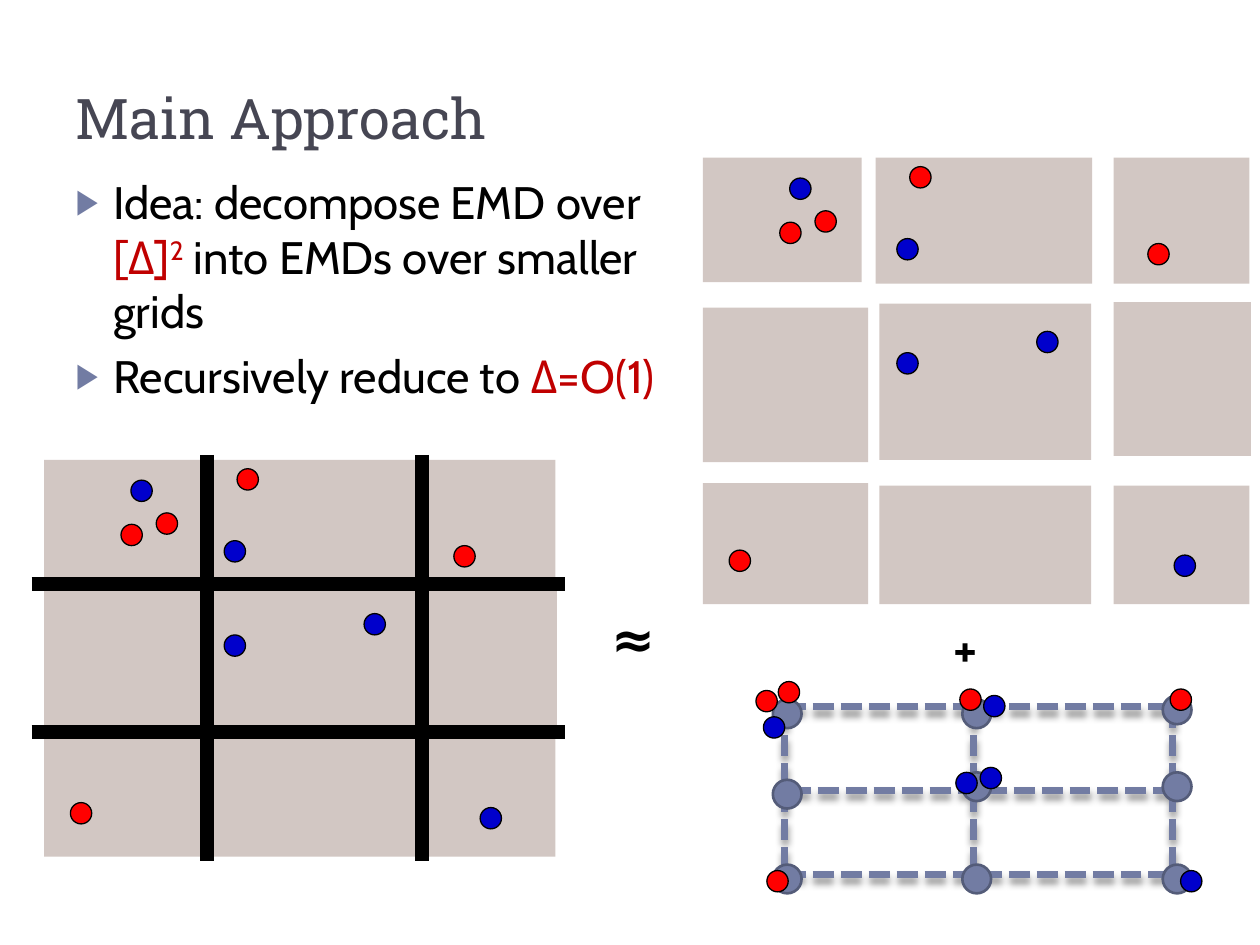
from lxml import etree
from pptx import Presentation
from pptx.dml.color import RGBColor
from pptx.enum import dml, shapes, text
from pptx.oxml import ns, parse_xml
from pptx.util import Cm, Pt

RED, BLUE, BLACK = "FF0000", "0000CC", "000000"
TAN, SLATE, SLATE_DARK = "D2C7C3", "727CA3", "545C79"
TITLE_COLOR, ACCENT = "464653", "C00000"
DOT, NODE = 0.43, 0.58

# Cells by row: left, top, width, height, and dots as (colour, x, y) within the cell
CELLS = [
    [(0, 0, 3.2, 2.51, [(RED, 1.55, 1.3), (RED, 2.26, 1.07), (BLUE, 1.75, 0.41)]),
     (3.2, 0, 4.37, 2.54, [(RED, 0.69, 0.18), (BLUE, 0.43, 1.63)]),
     (7.57, 0, 2.74, 2.54, [(RED, 0.69, 1.73)])],
    [(0, 2.44, 3.33, 3.12, []),
     (3.28, 2.54, 4.27, 3.15, [(BLUE, 3.17, 0.56), (BLUE, 0.35, 0.99)]),
     (7.57, 2.51, 2.77, 3.1, [])],
    [(0, 5.56, 3.33, 2.44, [(RED, 0.53, 1.35)]),
     (3.28, 5.61, 4.27, 2.39, []),
     (7.57, 5.61, 2.74, 2.39, [(BLUE, 1.22, 1.4)])],
]
# How far the cells move when the grid is pulled apart
COLUMN_SHIFTS = [0, 0.28, 0.71]
ROW_SHIFTS = [(0, 0, 0), (0.58, 0.4, 0.4), (1, 1, 1)]

# Coarse grid, relative to its top left corner
COARSE_XS, COARSE_YS = [0, 3.81, 7.82], [0, 1.68, 3.38]
NODE_XS = [-0.24, 3.58, 7.62]
NODE_YS = [(-0.15, -0.15, -0.23), (1.47, 1.32, 1.32), (3.18, 3.18, 3.18)]
COARSE_DOTS = [
    (RED, -0.13, -0.51), (RED, -0.58, -0.33), (BLUE, -0.43, 0.2),
    (RED, 3.53, -0.36), (RED, 7.77, -0.36), (RED, -0.36, 3.3),
    (BLUE, 4.01, -0.23), (BLUE, 3.45, 1.32), (BLUE, 3.94, 1.22), (BLUE, 7.98, 3.3),
]


def rgb(value):
    return RGBColor.from_string(value)


def add_filled(parent, kind, box, fill, line=None, line_width=0.75):
    shape = parent.shapes.add_shape(kind, *map(Cm, box))
    shape.shadow.inherit = False
    shape.fill.solid()
    shape.fill.fore_color.rgb = rgb(fill)
    if line:
        shape.line.color.rgb = rgb(line)
        shape.line.width = Pt(line_width)
    else:
        shape.line.fill.background()


def add_dot(parent, color, x, y):
    add_filled(parent, shapes.MSO_SHAPE.OVAL, (x, y, DOT, DOT), color, BLACK)


def add_line(parent, start, end, color, width, dashed=False):
    line = parent.shapes.add_connector(
        shapes.MSO_CONNECTOR.STRAIGHT, *map(Cm, start + end))
    line.line.color.rgb = rgb(color)
    line.line.width = Pt(width)
    if dashed:
        line.line.dash_style = dml.MSO_LINE.SQUARE_DOT
        line.line._get_or_add_ln().find(ns.qn("a:prstDash")).set("val", "sysDash")
    shadow = ('<a:outerShdw blurRad="50800" dist="43180" dir="5400000" rotWithShape="0">'
              '<a:srgbClr val="000000"><a:alpha val="40000"/></a:srgbClr></a:outerShdw>')
    line._element.spPr.append(parse_xml(
        f'<a:effectLst {ns.nsdecls("a")}>{shadow if dashed else ""}</a:effectLst>'))


def format_run(run, size, font, color, bold=False):
    run.font.size = Pt(size)
    run.font.name = font
    run.font.color.rgb = rgb(color)
    run.font.bold = bold


def place_text(shape, box):
    shape.left, shape.top, shape.width, shape.height = map(Cm, box)
    shape.text_frame.auto_size = text.MSO_AUTO_SIZE.NONE
    return shape.text_frame


def add_title(slide, box):
    frame = place_text(slide.shapes.title, box)
    frame.text = "Main Approach"
    frame.vertical_anchor = text.MSO_ANCHOR.BOTTOM
    frame.paragraphs[0].alignment = text.PP_ALIGN.LEFT
    format_run(frame.paragraphs[0].runs[0], 32, "Roboto Slab", TITLE_COLOR)


def set_bullet(paragraph):
    paragraph.space_before = Pt(6)
    properties = paragraph._p.get_or_add_pPr()
    properties.set("marL", str(Cm(0.76)))
    properties.set("indent", str(-Cm(0.76)))
    color = etree.SubElement(properties, ns.qn("a:buClr"))
    etree.SubElement(color, ns.qn("a:srgbClr"), val=SLATE)
    etree.SubElement(properties, ns.qn("a:buSzPct"), val="76000")
    etree.SubElement(properties, ns.qn("a:buChar"), char="▶")


def add_ideas(slide, box):
    frame = place_text(slide.placeholders[1], box)
    ideas = [
        [("Idea: decompose EMD over ", BLACK), ("[Δ]", ACCENT), ("2", ACCENT),
         (" into EMDs over smaller grids", BLACK)],
        [("Recursively reduce to ", BLACK), ("Δ=O(1)", ACCENT)],
    ]
    for index, parts in enumerate(ideas):
        paragraph = frame.paragraphs[0] if index == 0 else frame.add_paragraph()
        set_bullet(paragraph)
        for words, color in parts:
            run = paragraph.add_run()
            run.text = words
            format_run(run, 26, "Cabin", color)
            if words == "2":
                run.font._element.set("baseline", "30000")


def add_cells(slide, left, top, apart=False):
    dots = []
    for row, cells in enumerate(CELLS):
        for column, (x, y, width, height, cell_dots) in enumerate(cells):
            x += left + (COLUMN_SHIFTS[column] if apart else 0)
            y += top + (ROW_SHIFTS[row][column] if apart else 0)
            add_filled(slide, shapes.MSO_SHAPE.RECTANGLE, (x, y, width, height), TAN)
            dots += [(color, x + dx, y + dy) for color, dx, dy in cell_dots]
    for dot in dots:
        add_dot(slide, *dot)


def add_cuts(slide, left, top):
    group = slide.shapes.add_group_shape()
    for x in (3.28, 7.62):
        add_line(group, (left + x, top - 0.1), (left + x, top + 8.08), BLACK, 8)
    for y in (2.51, 5.49):
        add_line(group, (left - 0.25, top + y), (left + 10.49, top + y), BLACK, 8)


def add_coarse_grid(slide, left, top):
    group = slide.shapes.add_group_shape()
    # Dashed grid lines
    for y, shift in zip(COARSE_YS, (0, 0.1, 0)):
        start = left + shift
        add_line(group, (start, top + y), (start + 7.72, top + y), SLATE, 4, True)
    for x in COARSE_XS:
        add_line(group, (left + x, top), (left + x, top + COARSE_YS[-1]), SLATE, 4, True)
    # Nodes and the points moved onto them
    for row in NODE_YS:
        for x, y in zip(NODE_XS, row):
            add_filled(group, shapes.MSO_SHAPE.OVAL, (left + x, top + y, NODE, NODE),
                       SLATE, SLATE_DARK, 1.5)
    for color, x, y in COARSE_DOTS:
        add_dot(group, color, left + x, top + y)


def add_sign(slide, sign, left, top):
    shape = slide.shapes.add_textbox(*map(Cm, (left, top, 1.14, 1.55)))
    frame = shape.text_frame
    frame.text = sign
    frame.word_wrap = False
    frame.auto_size = text.MSO_AUTO_SIZE.SHAPE_TO_FIT_TEXT
    format_run(frame.paragraphs[0].runs[0], 30, "Cabin", BLACK, True)


def main():
    presentation = Presentation()
    presentation.slide_width, presentation.slide_height = Cm(25.4), Cm(19.05)
    slide = presentation.slides.add_slide(presentation.slide_layouts[1])
    add_title(slide, (1.27, 0.43, 22.86, 2.74))
    add_ideas(slide, (1.27, 3.38, 12.9, 13.72))
    # Whole grid with its cuts
    add_cells(slide, 0.89, 9.27)
    add_cuts(slide, 0.89, 9.27)
    # Separate cells plus the coarse grid
    add_cells(slide, 14.17, 3.18, apart=True)
    add_coarse_grid(slide, 15.82, 14.25)
    add_sign(slide, "+", 18.97, 12.27)
    add_sign(slide, "≈", 12.07, 12.09)
    presentation.save("out.pptx")


if __name__ == "__main__":
    main()
